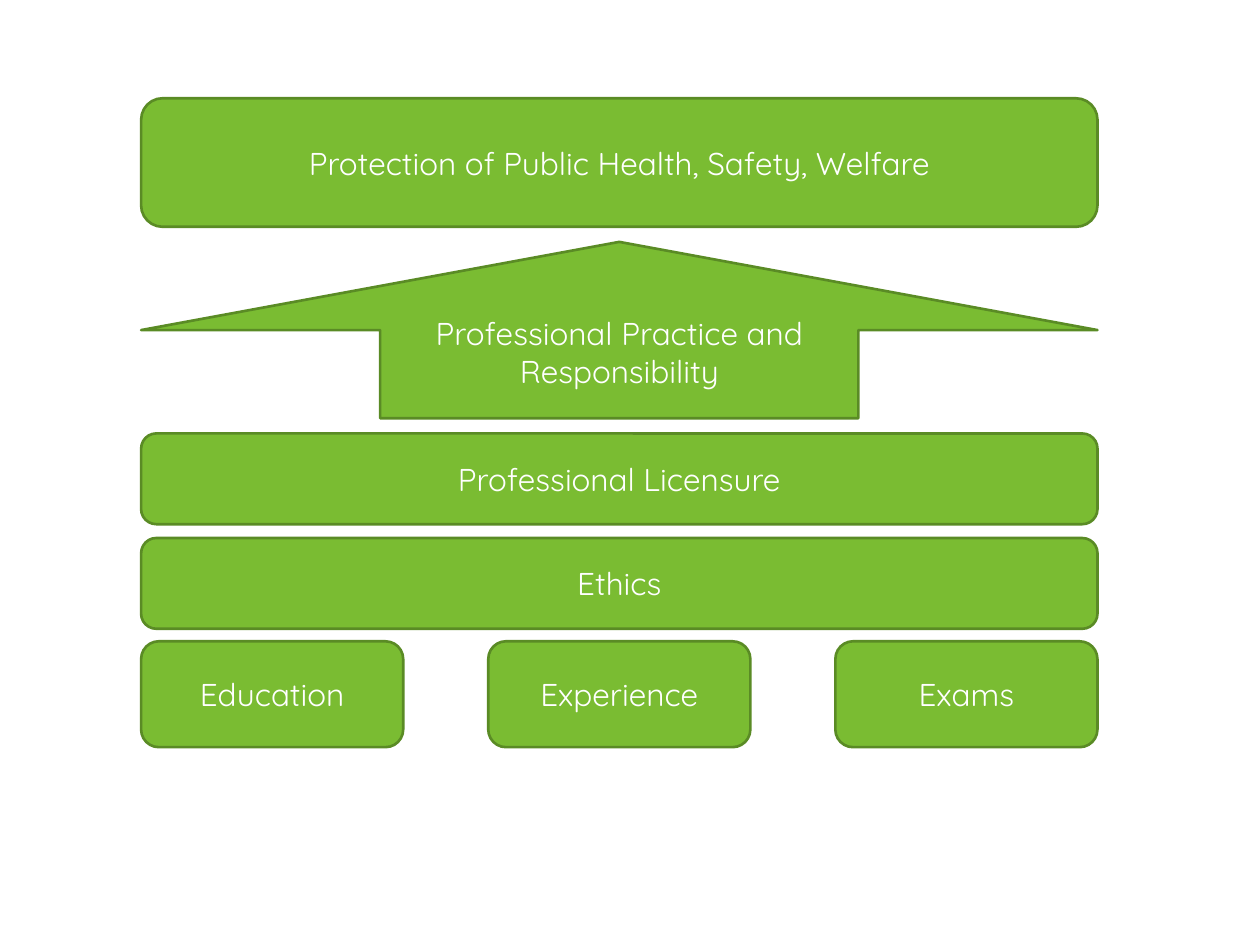
from dataclasses import dataclass

from pptx import Presentation
from pptx import util as u
from pptx.dml.color import RGBColor
from pptx.enum import shapes, text


@dataclass(frozen=True)
class Theme:
    fill: RGBColor = RGBColor(0x7A, 0xBC, 0x32)
    outline: RGBColor = RGBColor(0x5A, 0x8B, 0x25)
    label: RGBColor = RGBColor(0xFF, 0xFF, 0xFF)
    font: str = "Quicksand"
    label_size: int = 18
    line_width: float = 1.5


class SlideBuilder:
    def __init__(self, slide, theme):
        self.slide = slide
        self.theme = theme

    def block(self, kind, label, left, top, width, height):
        """Add a filled, outlined shape with a centred label."""
        theme = self.theme
        shape = self.slide.shapes.add_shape(
            kind, u.Inches(left), u.Inches(top), u.Inches(width), u.Inches(height))
        shape.shadow.inherit = False
        shape.fill.solid()
        shape.fill.fore_color.rgb = theme.fill
        shape.line.color.rgb = theme.outline
        shape.line.width = u.Pt(theme.line_width)

        frame = shape.text_frame
        frame.text = label
        frame.word_wrap = True
        frame.vertical_anchor = text.MSO_ANCHOR.MIDDLE
        paragraph = frame.paragraphs[0]
        paragraph.alignment = text.PP_ALIGN.CENTER
        font = paragraph.runs[0].font
        font.name = theme.font
        font.size = u.Pt(theme.label_size)
        font.color.rgb = theme.label

    def box(self, label, left, top, width, height):
        self.block(shapes.MSO_SHAPE.ROUNDED_RECTANGLE, label, left, top, width, height)

    def up_arrow(self, label, left, top, width, height):
        self.block(shapes.MSO_SHAPE.UP_ARROW, label, left, top, width, height)


LEFT, WIDTH = 1.12, 7.59
FOUNDATIONS = ["Education", "Experience", "Exams"]
FOUNDATION_WIDTH = 2.08


def main():
    presentation = Presentation()
    presentation.slide_width = u.Inches(10)
    presentation.slide_height = u.Inches(7.5)
    slide = presentation.slides.add_slide(presentation.slide_layouts[6])
    builder = SlideBuilder(slide, Theme())

    step = (WIDTH - FOUNDATION_WIDTH) / (len(FOUNDATIONS) - 1)
    for column, label in enumerate(FOUNDATIONS):
        builder.box(label, LEFT + column * step, 5.09, FOUNDATION_WIDTH, 0.84)

    builder.box("Professional Licensure", LEFT, 3.44, WIDTH, 0.72)
    builder.box("Ethics", LEFT, 4.27, WIDTH, 0.72)
    builder.up_arrow("Professional Practice and Responsibility", LEFT, 1.92, WIDTH, 1.4)
    builder.box("Protection of Public Health, Safety, Welfare", LEFT, 0.78, WIDTH, 1.02)

    presentation.save("out.pptx")


if __name__ == "__main__":
    main()
